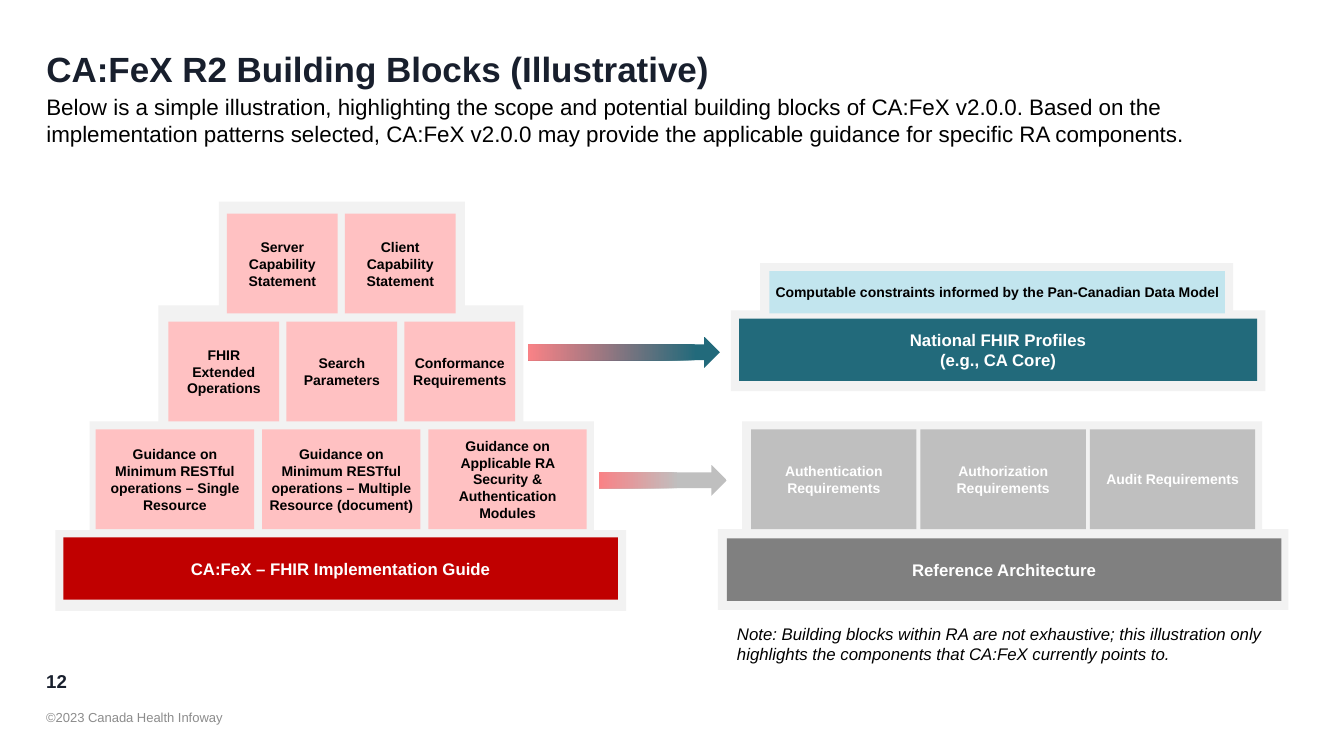
from dataclasses import dataclass

from pptx import Presentation
from pptx.dml.color import RGBColor
from pptx.enum.shapes import MSO_SHAPE
from pptx.enum.text import MSO_ANCHOR, PP_ALIGN
from pptx.util import Inches, Pt


@dataclass(frozen=True)
class Theme:
    font: str = "Arial"
    ink: str = "181F2D"
    black: str = "000000"
    white: str = "FFFFFF"
    muted: str = "8C8C8C"
    frame: str = "F2F2F2"
    pink: str = "FFC1C2"
    coral: str = "F98286"
    red: str = "C00000"
    silver: str = "BFBFBF"
    gray: str = "808080"
    teal: str = "226A7B"
    sky: str = "C2E5EE"
    title: float = 25
    lead: float = 16
    page: float = 13.3
    base: float = 12
    block: float = 10
    foot: float = 9.3


class Board:
    def __init__(self, slide, theme):
        self.slide = slide
        self.theme = theme

    def label(self, shape, lines, size, color, bold=False, italic=False,
              align=PP_ALIGN.LEFT, pad=(0.06, 0.06)):
        """Fill a shape with one paragraph per line; pad is (side, top)."""
        frame = shape.text_frame
        frame.word_wrap = True
        frame.vertical_anchor = MSO_ANCHOR.MIDDLE
        frame.margin_left = frame.margin_right = Inches(pad[0])
        frame.margin_top = frame.margin_bottom = Inches(pad[1])
        for i, line in enumerate(lines.split("\n")):
            para = frame.add_paragraph() if i else frame.paragraphs[0]
            para.alignment = align
            run = para.add_run()
            run.text = line
            font = run.font
            font.name = self.theme.font
            font.size = Pt(size)
            font.bold = bold
            font.italic = italic
            font.color.rgb = RGBColor.from_string(color)

    def text(self, box, words, size, color, **style):
        shape = self.slide.shapes.add_textbox(*map(Inches, box))
        self.label(shape, words, size, color, **style)

    def shape(self, kind, box):
        shape = self.slide.shapes.add_shape(kind, *map(Inches, box))
        shape.shadow.inherit = False
        shape.line.fill.background()
        return shape

    def rect(self, box, fill):
        shape = self.shape(MSO_SHAPE.RECTANGLE, box)
        shape.fill.solid()
        shape.fill.fore_color.rgb = RGBColor.from_string(fill)
        return shape

    def block(self, box, fill, words, size, color, pad=(0.06, 0.06)):
        self.label(self.rect(box, fill), words, size, color, bold=True,
                   align=PP_ALIGN.CENTER, pad=pad)

    def row(self, left, top, width, step, labels, fill, color):
        """Place equal blocks side by side, step apart from left to left."""
        for i, words in enumerate(labels):
            self.block((left + i * step, top, width, 0.99), fill, words,
                       self.theme.block, color)

    def arrow(self, box, head, start):
        """Draw an arrow fading to coral; start is where the fade begins."""
        fill = self.shape(MSO_SHAPE.RIGHT_ARROW, box).fill
        fill.gradient()
        fill.gradient_angle = 180
        stops = ((start, head), (1, self.theme.coral))
        for stop, (place, color) in zip(fill.gradient_stops, stops):
            stop.position = place
            stop.color.rgb = RGBColor.from_string(color)


def main():
    deck = Presentation()
    deck.slide_width, deck.slide_height = Inches(13.33), Inches(7.5)
    theme = Theme()
    board = Board(deck.slides.add_slide(deck.slide_layouts[6]), theme)

    board.text((0.4, 0.33, 12.65, 0.69), "CA:FeX R2 Building Blocks (Illustrative)",
               theme.title, theme.ink, bold=True)
    board.text((0.4, 0.87, 12.13, 0.65),
               "Below is a simple illustration, highlighting the scope and potential "
               "building blocks of CA:FeX v2.0.0. Based on the implementation patterns "
               "selected, CA:FeX v2.0.0 may provide the applicable guidance for "
               "specific RA components.", theme.lead, theme.black)

    frames = (
        (7.12, 5.25, 5.66, 0.8), (7.36, 4.18, 5.16, 1.32),
        (2.17, 2, 2.44, 1.19), (1.57, 3.03, 3.62, 1.32),
        (0.89, 4.18, 5, 1.32), (0.55, 5.26, 5.66, 0.8),
        (7.25, 3.08, 5.3, 0.8), (7.54, 2.61, 4.69, 0.58),
    )
    for box in frames:
        board.rect(box, theme.frame)

    tiers = (
        (2.25, 1.1, 1.17, ("Server Capability Statement",
                           "Client Capability Statement")),
        (1.67, 1.1, 1.17, ("FHIR Extended Operations", "Search Parameters",
                           "Conformance Requirements")),
        (0.95, 1.57, 1.65, (
            "Guidance on Minimum RESTful operations – Single Resource",
            "Guidance on Minimum RESTful operations – Multiple Resource (document)",
            "Guidance on Applicable RA Security & Authentication Modules")),
    )
    for i, (left, width, step, labels) in enumerate(tiers):
        board.row(left, 2.12 + i * 1.07, width, step, labels, theme.pink, theme.black)
    board.row(7.45, 4.26, 1.64, 1.68,
              ("Authentication Requirements", "Authorization Requirements",
               "Audit Requirements"), theme.silver, theme.white)

    bases = (
        ((0.63, 5.33, 5.5, 0.62), theme.red, "CA:FeX – FHIR Implementation Guide"),
        ((7.21, 5.34, 5.5, 0.62), theme.gray, "Reference Architecture"),
        ((7.33, 3.16, 5.14, 0.62), theme.teal,
         "National FHIR Profiles\n(e.g., CA Core)"),
    )
    for box, fill, words in bases:
        board.block(box, fill, words, theme.base, theme.white, pad=(0, 0))
    board.block((7.63, 2.69, 4.52, 0.42), theme.sky,
                "Computable constraints informed by the Pan-Canadian Data Model",
                theme.block, theme.black)

    board.arrow((5.24, 3.34, 1.9, 0.31), theme.teal, 0.12)
    board.arrow((5.94, 4.61, 1.27, 0.31), theme.silver, 0.37)

    board.text((7.25, 6.13, 5.66, 0.52),
               "Note: Building blocks within RA are not exhaustive; this illustration "
               "only highlights the components that CA:FeX currently points to.",
               theme.base, theme.black, italic=True)
    board.text((0.36, 6.56, 0.57, 0.4), "12", theme.page, theme.ink,
               bold=True, pad=(0.1, 0.05))
    board.text((0.36, 7.01, 2.67, 0.21), "©2023 Canada Health Infoway",
               theme.foot, theme.muted, pad=(0.1, 0.05))

    deck.save("out.pptx")


if __name__ == "__main__":
    main()
